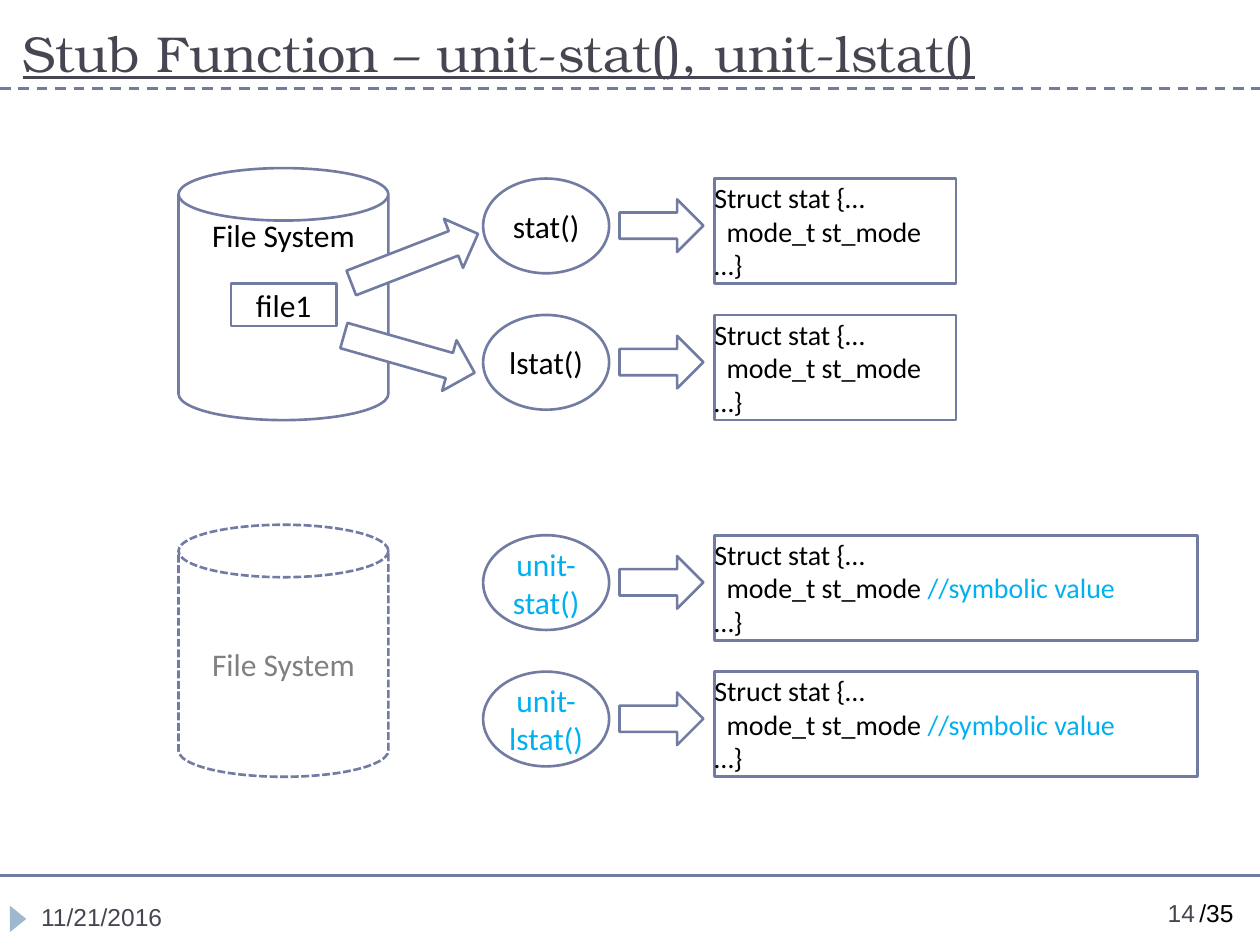
from lxml import etree
from pptx import Presentation
from pptx.dml.color import RGBColor
from pptx.enum.dml import MSO_LINE
from pptx.enum.shapes import MSO_CONNECTOR, MSO_SHAPE
from pptx.enum.text import MSO_ANCHOR, MSO_AUTO_SIZE, PP_ALIGN
from pptx.oxml.ns import qn
from pptx.util import Cm, Pt

BLACK = RGBColor(0x00, 0x00, 0x00)
WHITE = RGBColor(0xFF, 0xFF, 0xFF)
SLATE = RGBColor(0x72, 0x7C, 0xA3)
PALE = RGBColor(0x9F, 0xB8, 0xCD)
INK = RGBColor(0x46, 0x46, 0x53)
CYAN = RGBColor(0x00, 0xB0, 0xF0)
GRAY = RGBColor(0x80, 0x80, 0x80)
CAN, OVAL, RECT = MSO_SHAPE.CAN, MSO_SHAPE.OVAL, MSO_SHAPE.RECTANGLE
ARROW, WEDGE = MSO_SHAPE.RIGHT_ARROW, MSO_SHAPE.ISOSCELES_TRIANGLE
DASH, DOTS = MSO_LINE.DASH, MSO_LINE.SQUARE_DOT
LEFT, MID = PP_ALIGN.LEFT, PP_ALIGN.CENTER
TOP, CENTER, BOTTOM = MSO_ANCHOR.TOP, MSO_ANCHOR.MIDDLE, MSO_ANCHOR.BOTTOM
PLAIN = MSO_AUTO_SIZE.NONE
STRAIGHT = MSO_CONNECTOR.STRAIGHT

WIDE, HIGH = 25.4, 19.05
PITCH = 2.75
INDENT = 0.25


def write(frame, text, font="Calibri", size=18, color=BLACK, align=LEFT,
          anchor=TOP, inset=None, wrap=True, under=None, indents=()):
    frame.word_wrap = wrap
    frame.auto_size = PLAIN
    frame.vertical_anchor = anchor
    if inset is not None:
        frame.margin_left = frame.margin_right = Cm(inset)
        frame.margin_top = frame.margin_bottom = Cm(inset)
    lines = [[(text, color)]] if isinstance(text, str) else text
    for i, line in enumerate(lines):
        para = frame.paragraphs[0] if i == 0 else frame.add_paragraph()
        para.alignment = align
        if i in indents:
            para._p.get_or_add_pPr().set("marL", str(Cm(INDENT)))
        for words, tint in line:
            run = para.add_run()
            run.text = words
            run.font.name = font
            run.font.size = Pt(size)
            run.font.color.rgb = tint
            run.font.underline = under


def draw(slide, kind, x, y, w, h, fill=WHITE, line=SLATE, dash=None, turn=0):
    shape = slide.shapes.add_shape(kind, Cm(x), Cm(y), Cm(w), Cm(h))
    shape.shadow.inherit = False
    shape.rotation = turn
    shape.fill.solid()
    shape.fill.fore_color.rgb = fill
    if line is None:
        shape.line.fill.background()
    else:
        shape.line.color.rgb = line
        shape.line.width = Pt(1.5)
        shape.line.dash_style = dash
    return shape


def label(slide, text, x, y, w, h, **form):
    box = slide.shapes.add_textbox(Cm(x), Cm(y), Cm(w), Cm(h))
    write(box.text_frame, text, font="Arial", size=14, **form)


def rule(slide, y, dash=None):
    line = slide.shapes.add_connector(STRAIGHT, 0, Cm(y), Cm(WIDE), Cm(y))
    line.line.color.rgb = SLATE
    line.line.width = Pt(1.5)
    line.line.dash_style = dash
    etree.SubElement(line._element.spPr, qn("a:effectLst"))


def header(slide, x, y, w, h):
    title = slide.shapes.title
    title.left, title.top, title.width, title.height = Cm(x), Cm(y), Cm(w), Cm(h)
    write(title.text_frame, "Stub Function – unit-stat(), unit-lstat()",
          font="TeX Gyre Bonum", size=28.8, color=INK, anchor=BOTTOM, under=True)
    rule(slide, y + h - 0.02, DASH)


def footer(slide, y):
    rule(slide, y)
    draw(slide, WEDGE, 0.1, y + 0.71, 0.53, 0.33, fill=PALE, line=None, turn=90)
    label(slide, "11/21/2016", 0.58, y + 0.41, 3.58, 0.81, color=INK)
    label(slide, "14", 23.29, y + 0.33, 1.27, 0.81, color=INK)
    label(slide, "/35", 23.93, y + 0.33, 1.19, 0.86, wrap=False)


def store(slide, x, y, color=BLACK, anchor=CENTER, dash=None):
    can = draw(slide, CAN, x, y, 4.23, 5.08, dash=dash)
    write(can.text_frame, "File System", color=color, align=MID,
          anchor=anchor, inset=0)
    return can


def source(slide, x, y):
    can = store(slide, x, y, anchor=TOP)
    can.text_frame.margin_top = Cm(-0.1)
    file = draw(slide, RECT, x + 1.06, y + 2.33, 2.12, 0.85)
    write(file.text_frame, "file1", align=MID, anchor=CENTER, inset=0)
    for dx, dy, turn in ((3.39, 1.29, 338.8), (3.28, 3.22, 15.9)):
        draw(slide, ARROW, x + dx, y + dy, 2.74, 1.06, turn=turn)


def calls(slide, x, y, w, names, color=BLACK, note=""):
    field = [("mode_t st_mode", BLACK)]
    if note:
        field = [("mode_t st_mode ", BLACK), (note, color)]
    struct = [[("Struct stat {…", BLACK)], field, [("…}", BLACK)]]
    for i, name in enumerate(names):
        top = y + i * PITCH
        oval = draw(slide, OVAL, x, top, 2.54, 1.91)
        write(oval.text_frame, name, color=color, align=MID,
              anchor=CENTER, inset=0)
        draw(slide, ARROW, x + 2.75, top + 0.42, 1.69, 1.06)
        card = draw(slide, RECT, x + 4.66, top, w, 2.12)
        write(card.text_frame, struct, size=16, anchor=CENTER, inset=0,
              indents=(1,))


def main():
    deck = Presentation()
    deck.slide_width, deck.slide_height = Cm(WIDE), Cm(HIGH)
    slide = deck.slides.add_slide(deck.slide_layouts[5])
    header(slide, 0.2, 0.43, 25, 1.37)
    footer(slide, 17.65)
    source(slide, 3.6, 3.39)
    calls(slide, 9.74, 3.6, 4.87, ("stat()", "lstat()"))
    store(slide, 3.6, 10.58, color=GRAY, dash=DOTS)
    calls(slide, 9.74, 10.79, 9.74, ("unit-stat()", "unit-lstat()"),
          color=CYAN, note="//symbolic value")
    deck.save("out.pptx")


if __name__ == "__main__":
    main()
